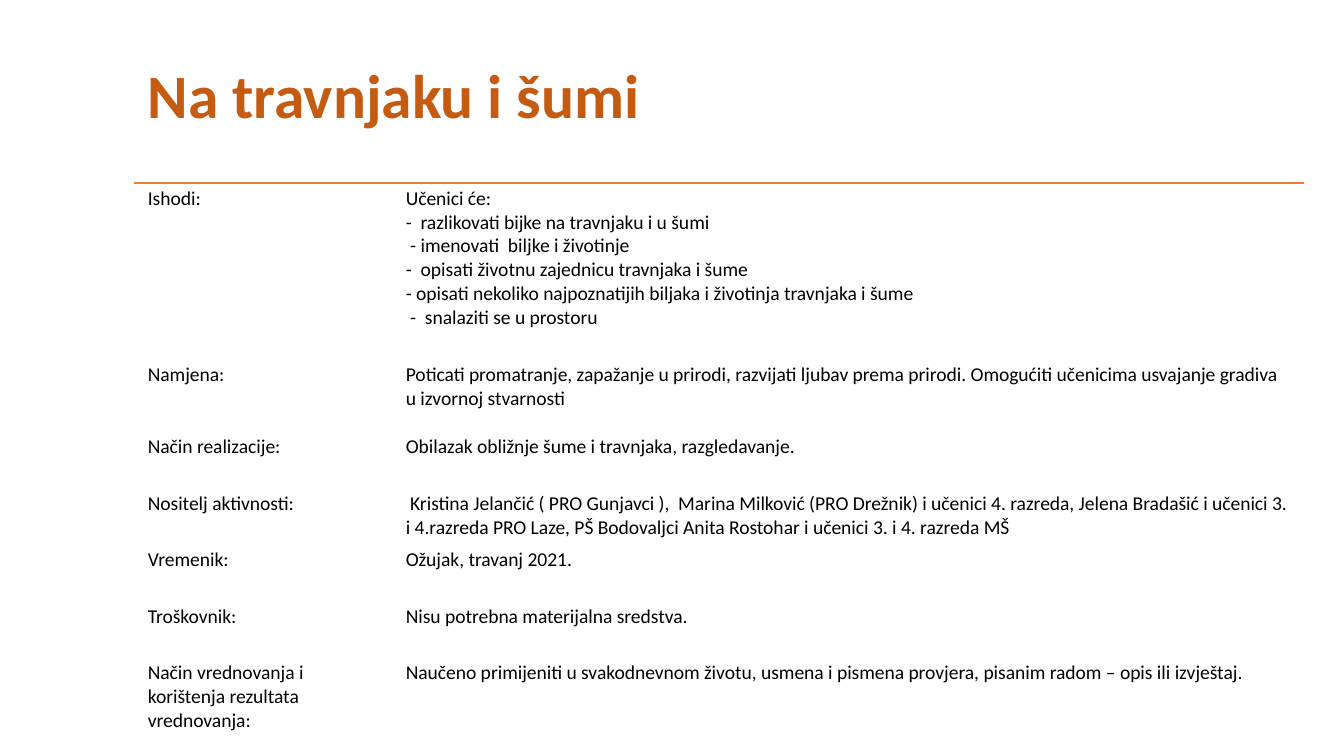
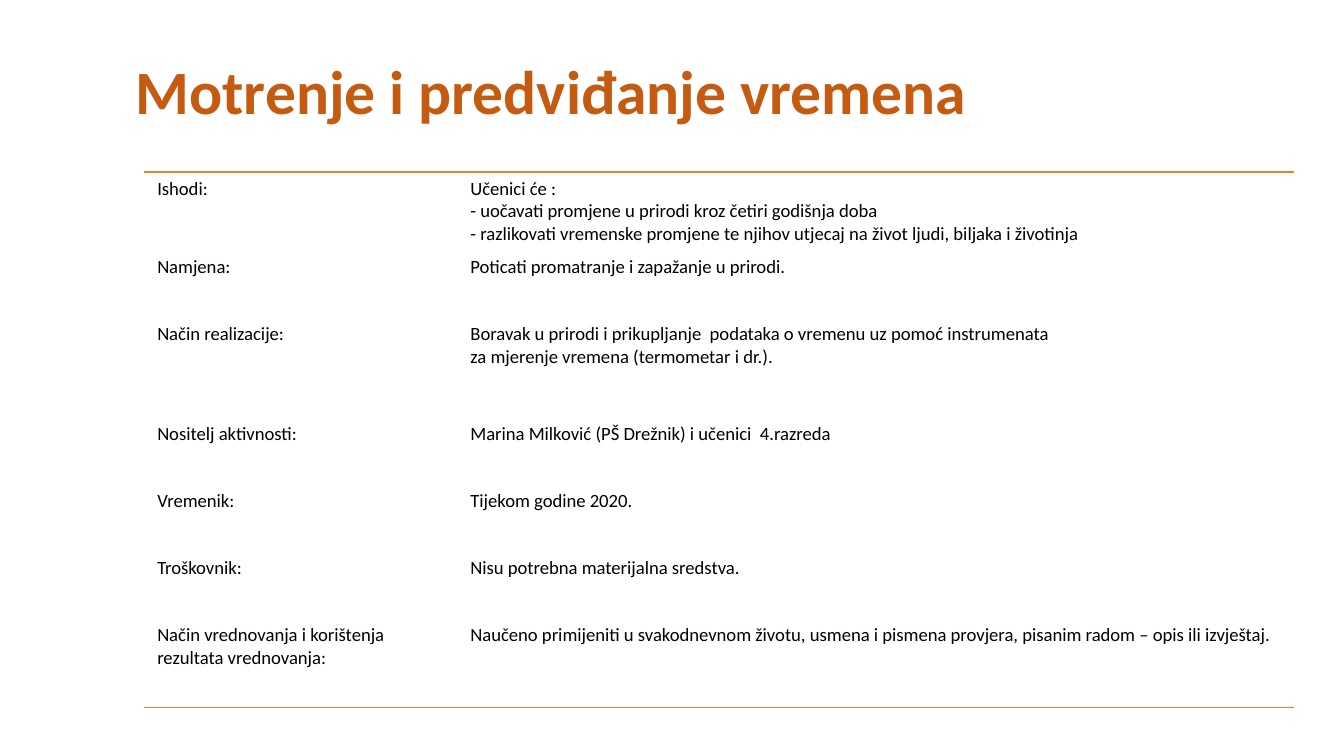
from lxml import etree
from pptx import Presentation
from pptx.dml.color import RGBColor
from pptx.enum.text import MSO_ANCHOR, MSO_AUTO_SIZE, PP_ALIGN
from pptx.oxml.ns import qn
from pptx.util import Inches, Pt

FONT = "Calibri"
BLACK = "000000"
TITLE_COLOUR = "C55A11"
RULE_COLOUR = "ED7D31"
PLAIN_TABLE_STYLE = "{2D5ABB26-0587-4C30-8999-92F81FD0307C}"
INSET = 0.1
TITLE_HEIGHT = 0.94
OUTCOMES, PURPOSE, METHOD = "Ishodi:", "Namjena:", "Način realizacije:"
LEADERS, SCHEDULE, COSTS = "Nositelj aktivnosti:", "Vremenik:", "Troškovnik:"
ASSESSMENT = "Način vrednovanja i korištenja rezultata vrednovanja:"
NO_COSTS = "Nisu potrebna materijalna sredstva."
ASSESSMENT_TEXT = (
    "Naučeno primijeniti u svakodnevnom životu, usmena i pismena provjera, "
    "pisanim radom – opis ili izvještaj."
)

activities = [
    {
        "title": "Na travnjaku i šumi",
        "title_box": (1, 0.26, 8.85),
        "table_at": (1, 1.36),
        "columns": (1.92, 6.78),
        "size": 10.5,
        "margin": 0.03,
        "rows": [
            (1.31, OUTCOMES, [
                "Učenici će:",
                "-  razlikovati bijke na travnjaku i u šumi",
                " - imenovati  biljke i životinje",
                "-  opisati životnu zajednicu travnjaka i šume",
                "- opisati nekoliko najpoznatijih biljaka i životinja travnjaka i šume",
                " -  snalaziti se u prostoru",
            ]),
            (0.54, PURPOSE, [
                "Poticati promatranje, zapažanje u prirodi, razvijati ljubav prema prirodi. "
                "Omogućiti učenicima usvajanje gradiva u izvornoj stvarnosti",
            ]),
            (0.42, METHOD, ["Obilazak obližnje šume i travnjaka, razgledavanje."]),
            (0.42, LEADERS, [
                " Kristina Jelančić ( PRO Gunjavci ),  Marina Milković (PRO Drežnik) "
                "i učenici 4. razreda, Jelena Bradašić i učenici 3. i 4.razreda PRO Laze, "
                "PŠ Bodovaljci Anita Rostohar i učenici 3. i 4. razreda MŠ",
            ]),
            (0.42, SCHEDULE, ["Ožujak, travanj 2021."]),
            (0.42, COSTS, [NO_COSTS]),
            (0.86, ASSESSMENT, [ASSESSMENT_TEXT]),
        ],
    },
    {
        "title": "Motrenje i predviđanje vremena",
        "title_box": (0.91, 0.23, 8.18),
        "table_at": (1.07, 1.28),
        "columns": (2.33, 6.23),
        "size": 10,
        "margin": 0.04,
        "rows": [
            (0.58, OUTCOMES, [
                "Učenici će :",
                "- uočavati promjene u prirodi kroz četiri godišnja doba",
                "- razlikovati vremenske promjene te njihov utjecaj na život ljudi, biljaka i životinja",
            ]),
            (0.5, PURPOSE, ["Poticati promatranje i zapažanje u prirodi."]),
            (0.74, METHOD, [
                "Boravak u prirodi i prikupljanje  podataka o vremenu uz pomoć instrumenata\n"
                "za mjerenje vremena (termometar i dr.).",
            ]),
            (0.5, LEADERS, ["Marina Milković (PŠ Drežnik) i učenici  4.razreda"]),
            (0.5, SCHEDULE, ["Tijekom godine 2020."]),
            (0.5, COSTS, [NO_COSTS]),
            (0.66, ASSESSMENT, [ASSESSMENT_TEXT]),
        ],
    },
]


def write_paragraphs(frame, texts, size, colour, bold=False):
    for index, text in enumerate(texts):
        paragraph = frame.paragraphs[0] if index == 0 else frame.add_paragraph()
        paragraph.alignment = PP_ALIGN.LEFT
        for line_index, line in enumerate(text.split("\n")):
            if line_index:
                paragraph.add_line_break()
            run = paragraph.add_run()
            run.text = line
            run.font.name = FONT
            run.font.size = Pt(size)
            run.font.bold = bold
            run.font.color.rgb = RGBColor.from_string(colour)


def add_rule(cell, side):
    line = etree.Element(qn(f"a:ln{side}"), w=str(Pt(1)))
    fill = etree.SubElement(line, qn("a:solidFill"))
    etree.SubElement(fill, qn("a:srgbClr"), val=RULE_COLOUR)
    cell._tc.get_or_add_tcPr().insert(0, line)


presentation = Presentation()
presentation.slide_width = Inches(10)
presentation.slide_height = presentation.slide_width * 9 // 16

for activity in activities:
    slide = presentation.slides.add_slide(presentation.slide_layouts[5])

    title = slide.shapes.title
    left, top, width = activity["title_box"]
    title.left, title.top = Inches(left), Inches(top)
    title.width, title.height = Inches(width), Inches(TITLE_HEIGHT)
    frame = title.text_frame
    frame.word_wrap = True
    frame.auto_size = MSO_AUTO_SIZE.NONE
    frame.vertical_anchor = MSO_ANCHOR.MIDDLE
    frame.margin_left = frame.margin_right = Inches(INSET)
    frame.margin_top = frame.margin_bottom = Inches(INSET)
    write_paragraphs(frame, [activity["title"]], 33, TITLE_COLOUR, bold=True)
    frame.paragraphs[0].line_spacing = 0.9

    rows = activity["rows"]
    columns = activity["columns"]
    left, top = activity["table_at"]
    height = sum(row[0] for row in rows)
    table = slide.shapes.add_table(
        len(rows), len(columns), Inches(left), Inches(top),
        Inches(sum(columns)), Inches(height),
    ).table
    table.first_row = False
    table.horz_banding = False
    table._tbl.tblPr.find(qn("a:tableStyleId")).text = PLAIN_TABLE_STYLE
    for column, width in zip(table.columns, columns):
        column.width = Inches(width)

    for row_index, (height, label, texts) in enumerate(rows):
        table.rows[row_index].height = Inches(height)
        for column_index, cell_texts in enumerate(([label], texts)):
            cell = table.cell(row_index, column_index)
            cell.fill.background()
            cell.margin_left = cell.margin_right = Inches(INSET)
            cell.margin_top = cell.margin_bottom = Inches(activity["margin"])
            write_paragraphs(cell.text_frame, cell_texts, activity["size"], BLACK)
            if row_index == 0:
                add_rule(cell, "T")
            if row_index == len(rows) - 1:
                add_rule(cell, "B")

presentation.save("out.pptx")
